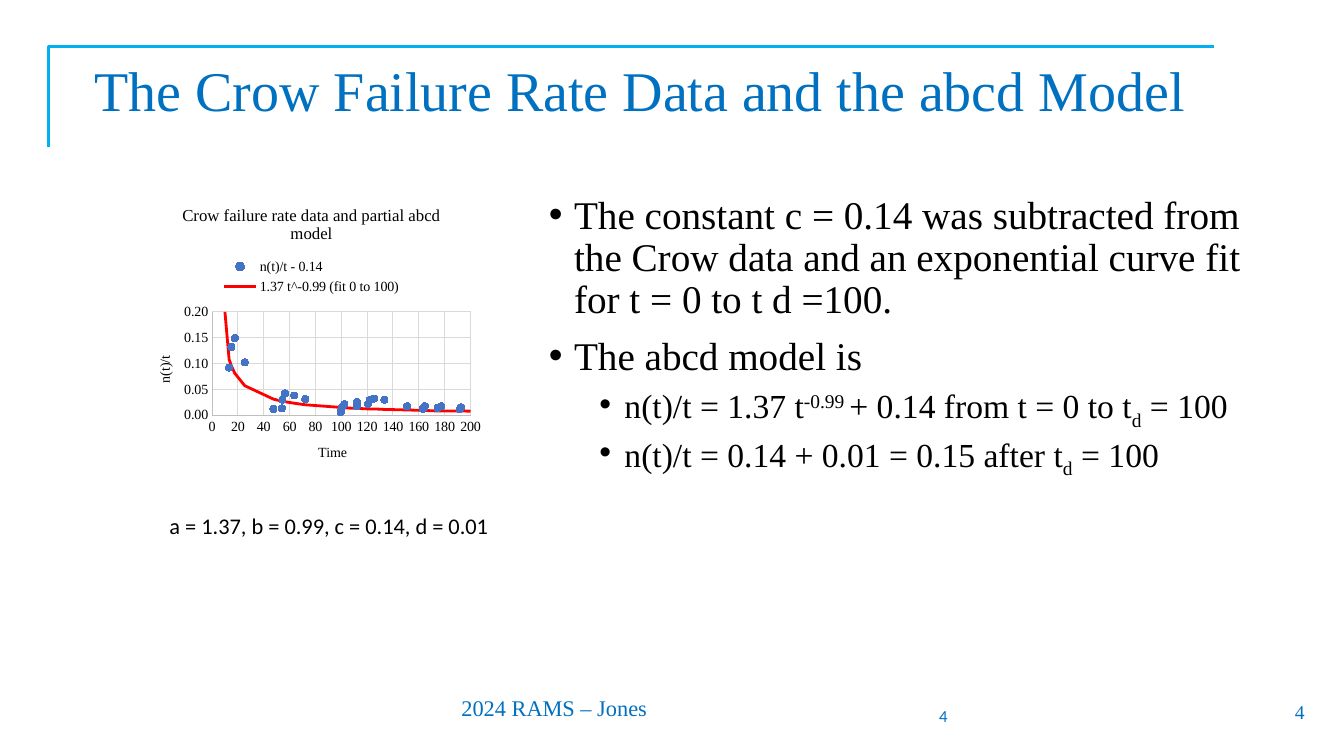
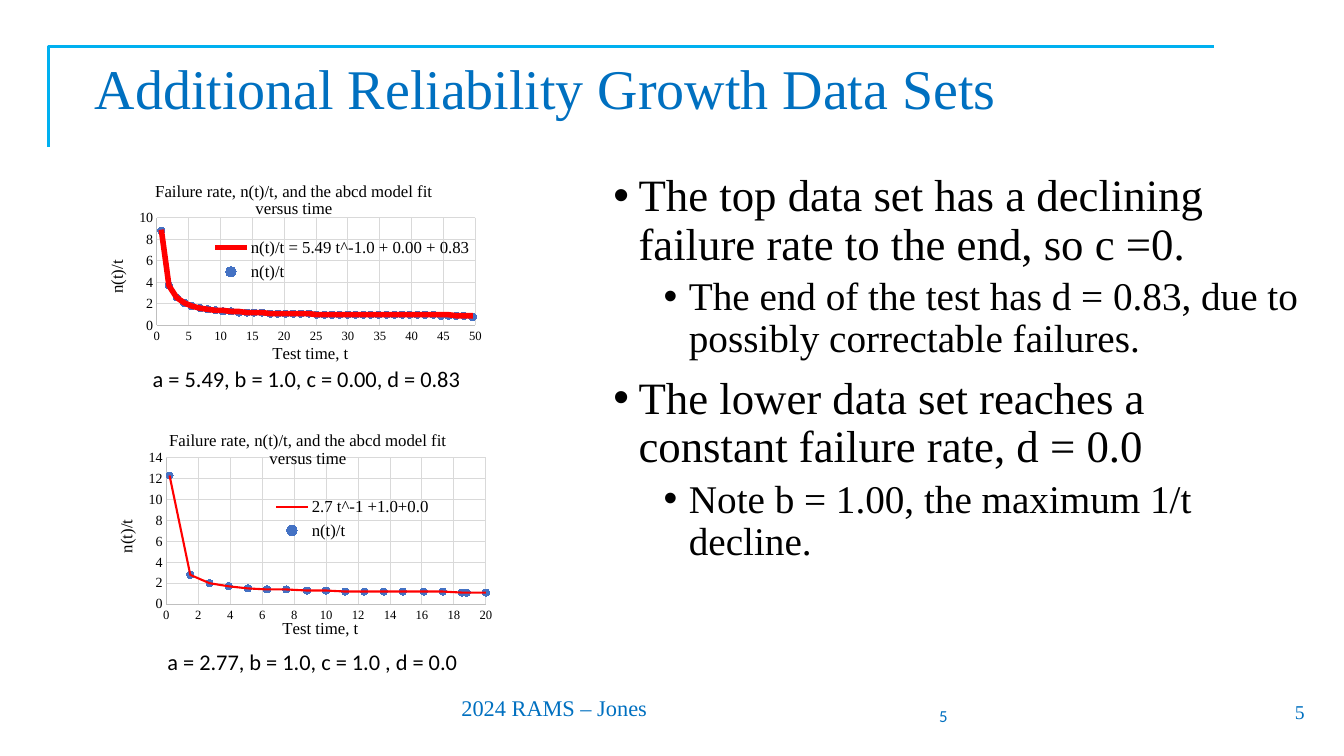
from lxml.etree import SubElement
from pptx import Presentation
from pptx.chart.data import XyChartData
from pptx.dml.color import RGBColor
from pptx.enum.chart import XL_CHART_TYPE, XL_LEGEND_POSITION, XL_MARKER_STYLE, XL_TICK_MARK
from pptx.enum.text import MSO_ANCHOR, MSO_AUTO_SIZE, PP_ALIGN
from pptx.oxml.ns import qn
from pptx.util import Pt

COLORS = {
    "title": "0070C0",
    "frame": "00B0F0",
    "text": "000000",
    "points": "4472C4",
    "fit": "FF0000",
    "axis": "BFBFBF",
    "grid": "D9D9D9",
}
SERIF = "Times New Roman"
SANS = "Calibri"
FIT_TITLE = "Failure rate, n(t)/t, and the abcd model fit versus time"

CROW_TIMES = [
    0.7, 3.7, 13.2, 15, 17.6, 25.3, 47.5, 54, 54.5, 56.4, 63.6, 72.2, 99.2, 99.6,
    100.3, 102.5, 112, 112.2, 120.9, 121.9, 125.5, 133.4, 151, 163, 164.7, 174.5,
    177.4, 191.6, 192.7, 213, 244.8, 249, 250.8, 260.1, 263.5, 273.1, 274.7, 282.8,
    285, 304, 315.4, 317.1, 320.6, 324.5, 324.9, 342, 350.2, 355.2, 364.6, 364.9,
    366.3, 373, 379.4, 389, 394.9, 395.2,
]
CROW_RATES = [
    1.294, 0.406, 0.092, 0.132, 0.149, 0.102, 0.012, 0.013, 0.03, 0.042, 0.038, 0.031,
    None, 0.006, 0.015, 0.021, 0.017, 0.025, 0.022, 0.029, 0.032, 0.03, 0.017, 0.012,
    0.017, 0.014, 0.017, 0.011, 0.015, 0.006, -0.008, -0.006, -0.003, -0.004, -0.002,
    -0.003, 0, -0.001, 0.002, -0.003, -0.005, -0.003, -0.001, 0.001, 0.004, 0, -0.001,
    0, -0.001, 0.002, 0.004, 0.004, 0.005, 0.004, 0.004, 0.007,
]
CROW_FIT = [
    1.945, 0.377, 0.108, 0.095, 0.081, 0.057, 0.031, 0.027, 0.027, 0.026, 0.023, 0.02,
    0.015, 0.015, 0.015, 0.014, 0.013, 0.013, 0.012, 0.012, 0.012, 0.011, 0.01, 0.009,
    0.009, 0.008, 0.008, 0.008, 0.008, 0.007,
] + [0.006] * 5 + [0.005] * 10 + [0.004] * 11

TOP_TIMES = [round(0.67 + 1.22 * i, 1) for i in range(41)] + [49.6]
TOP_START = [3.7, 2.6, 2.1, 1.8, 1.6, 1.5, 1.4]
TOP_FIT = [8.9] + TOP_START + [1.4] + [1.3] * 2 + [1.2] * 3 + [1.1] * 6 + [1] * 18 + [0.9] * 4
TOP_RATES = ([8.8] + TOP_START + [1.3] * 2 + [1.2] * 4 + [1.1] * 6 + [1] * 16
             + [0.9] * 4 + [0.8] * 2)

LOWER_TIMES = [0.2, 1.5, 2.7, 3.9, 5.1, 6.3, 7.5, 8.8, 10, 11.2, 12.4, 13.6, 14.8,
               16.1, 17.3, 18.5, 18.8, 20]
LOWER_RATES = [12.3, 2.8, 2, 1.7, 1.5, 1.4, 1.4, 1.3, 1.3] + [1.2] * 6 + [1.1] * 3


def rgb(name):
    return RGBColor.from_string(COLORS[name])


def style_font(font, size, color="text", name=SERIF):
    font.size, font.name, font.bold = Pt(size), name, False
    font.color.rgb = rgb(color)


def add_run(p, text, size, color="text", name=SERIF, baseline=0):
    r = p.add_run()
    r.text = text
    style_font(r.font, size, color, name)
    if baseline:
        r._r.get_or_add_rPr().set("baseline", str(baseline * 1000))


def add_label(s, box, text, size, color="text", name=SERIF, align=PP_ALIGN.LEFT,
              anchor=MSO_ANCHOR.TOP, wrap=True):
    tf = s.shapes.add_textbox(*map(Pt, box)).text_frame
    tf.word_wrap, tf.vertical_anchor = wrap, anchor
    p = tf.paragraphs[0]
    p.alignment = align
    add_run(p, text, size, color, name)


def add_frame(s):
    builder = s.shapes.build_freeform(Pt(34.5), Pt(105))
    builder.add_line_segments([(Pt(34.5), Pt(33)), (Pt(867), Pt(33))], close=False)
    sp = builder.convert_to_shape()
    sp.shadow.inherit = False
    sp.fill.background()
    sp.line.color.rgb = rgb("frame")
    sp.line.width = Pt(2)


def add_slide(prs, title, number, top, height):
    s = prs.slides.add_slide(prs.slide_layouts[5])
    add_frame(s)
    sp = s.shapes.title
    sp.left, sp.top, sp.width, sp.height = map(Pt, (60.5, top, 839.5, height))
    tf = sp.text_frame
    tf.word_wrap, tf.auto_size = True, MSO_AUTO_SIZE.NONE
    tf.vertical_anchor = MSO_ANCHOR.MIDDLE
    p = tf.paragraphs[0]
    p.alignment, p.line_spacing = PP_ALIGN.LEFT, 0.9
    add_run(p, title, 40, "title")
    add_label(s, (322.5, 492, 153, 27), "2024 RAMS – Jones", 16, "title", wrap=False)
    add_label(s, (723, 494, 216, 29), str(number), 14, "title",
              align=PP_ALIGN.RIGHT, anchor=MSO_ANCHOR.MIDDLE)
    add_label(s, (594, 486, 90, 36), str(number), 12, "title", SANS,
              PP_ALIGN.RIGHT, MSO_ANCHOR.BOTTOM)
    return s


def add_bullets(s, box, sizes, items):
    tf = s.shapes.add_textbox(*map(Pt, box)).text_frame
    tf.word_wrap = True
    for i, (level, runs) in enumerate(items):
        p = tf.add_paragraph() if i else tf.paragraphs[0]
        p.level = level
        pPr = p._p.get_or_add_pPr()
        pPr.set("marL", str(Pt(18 + 36 * level)))
        pPr.set("indent", str(-Pt(18)))
        SubElement(pPr, qn("a:buFont")).set("typeface", "Arial")
        SubElement(pPr, qn("a:buChar")).set("char", "•")
        p.line_spacing = 0.9
        p.space_before = Pt((10, 5)[level] if i else 0)
        for text, baseline in runs:
            add_run(p, text, sizes[level], baseline=baseline)


def set_layout(parent, index, box, inner=False):
    for old in parent.findall(qn("c:layout")):
        parent.remove(old)
    layout = SubElement(parent, qn("c:layout"))
    parent.insert(index, layout)
    manual = SubElement(layout, qn("c:manualLayout"))
    settings = [("layoutTarget", "inner")] if inner else []
    settings += [("xMode", "edge"), ("yMode", "edge"), *zip("xywh", box)]
    for tag, value in settings:
        SubElement(manual, qn("c:" + tag)).set("val", str(value))


def set_title(owner, text, size):
    owner.has_title = True
    title = owner.chart_title if hasattr(owner, "chart_title") else owner.axis_title
    add_run(title.text_frame.paragraphs[0], text, size)


def style_axis(axis, title, title_size, label_size, top, unit, number_format):
    set_title(axis, title, title_size)
    axis.minimum_scale, axis.maximum_scale, axis.major_unit = 0, top, unit
    axis.major_tick_mark = axis.minor_tick_mark = XL_TICK_MARK.NONE
    axis.has_major_gridlines = True
    for line, color in ((axis.format.line, "axis"), (axis.major_gridlines.format.line, "grid")):
        line.color.rgb = rgb(color)
        line.width = Pt(0.75)
    labels = axis.tick_labels
    labels.number_format, labels.number_format_is_linked = number_format, False
    style_font(labels.font, label_size)


def blank_missing(chart, series):
    for ser, (_, values, _) in zip(chart.element.iter(qn("c:ser")), series):
        for pt in list(ser.find(qn("c:yVal")).iter(qn("c:pt"))):
            if values[int(pt.get("idx"))] is None:
                pt.getparent().remove(pt)


def add_scatter(s, box, title, times, series, x_axis, y_axis, legend_size,
                plot_box=None, legend_box=None):
    data = XyChartData()
    for name, values, _ in series:
        points = data.add_series(name)
        for x, y in zip(times, values):
            points.add_data_point(x, y or 0)
    chart = s.shapes.add_chart(XL_CHART_TYPE.XY_SCATTER, *map(Pt, box), data).chart
    blank_missing(chart, series)
    style_font(chart.font, 10, name=SANS)
    set_title(chart, title, 12)
    style_axis(chart.category_axis, *x_axis)
    style_axis(chart.value_axis, *y_axis)
    chart.has_legend = True
    legend = chart.legend
    legend.position = XL_LEGEND_POSITION.RIGHT if legend_box else XL_LEGEND_POSITION.TOP
    legend.include_in_layout = False
    style_font(legend.font, legend_size)
    plot = chart.plots[0]
    plot.vary_by_categories = False
    for ser, (_, _, width) in zip(plot.series, series):
        if width:
            ser.marker.style = XL_MARKER_STYLE.NONE
            ser.format.line.color.rgb = rgb("fit")
            ser.format.line.width = Pt(width)
        else:
            ser.format.line.fill.background()
            ser.marker.style, ser.marker.size = XL_MARKER_STYLE.CIRCLE, 5
            ser.marker.format.fill.solid()
            ser.marker.format.fill.fore_color.rgb = rgb("points")
            ser.marker.format.line.color.rgb = rgb("points")
    if plot_box:
        set_layout(chart.element.find(".//" + qn("c:plotArea")), 0, plot_box, inner=True)
    if legend_box:
        set_layout(chart.element.find(".//" + qn("c:legend")), 1, legend_box)


def add_crow_slide(prs):
    s = add_slide(prs, "The Crow Failure Rate Data and the abcd Model", 4, 35, 63)
    add_bullets(s, (385, 136, 520, 311), (28, 24), [
        (0, [("The constant c = 0.14 was subtracted from the Crow data and an "
              "exponential curve fit for t = 0 to t d =100.", 0)]),
        (0, [("The abcd model is", 0)]),
        (1, [("n(t)/t = 1.37 t", 0), ("-0.99 ", 30), ("+ 0.14 from t = 0 to t", 0),
             ("d", -25), (" = 100", 0)]),
        (1, [("n(t)/t = 0.14 + 0.01 = 0.15 after t", 0), ("d", -25), (" = 100", 0)]),
    ])
    add_scatter(s, (96.5, 136, 252, 208), "Crow failure rate data and partial abcd model",
                CROW_TIMES,
                [("n(t)/t - 0.14", CROW_RATES, 0),
                 ("1.37 t^-0.99 (fit 0 to 100)", CROW_FIT, 2)],
                ("Time", 10, 10, 200, 20, "General"),
                ("n(t)/t", 10, 10, 0.2, 0.05, "0.00"), 10)
    add_label(s, (114, 362, 252, 27), "a = 1.37, b = 0.99, c = 0.14, d = 0.01", 16, name=SANS)


def add_data_sets_slide(prs):
    s = add_slide(prs, "Additional Reliability Growth Data Sets", 5, 31, 68)
    add_bullets(s, (431, 120, 505, 382), (32, 28), [
        (0, [("The top data set has a declining failure rate to the end, so c =0.", 0)]),
        (1, [("The end of the test has d = 0.83, due to possibly correctable failures.", 0)]),
        (0, [("The lower data set reaches a constant failure rate, d = 0.0", 0)]),
        (1, [("Note b = 1.00, the maximum 1/t decline.", 0)]),
    ])
    add_scatter(s, (66, 120, 288, 142.5), FIT_TITLE, TOP_TIMES,
                [("n(t)/t = 5.49 t^-1.0 + 0.00 + 0.83", TOP_FIT, 4), ("n(t)/t", TOP_RATES, 0)],
                ("Test time, t", 12, 9, 50, 5, "0"), ("n(t)/t", 12, 10, 10, 2, "0"), 12,
                (0.16, 0.25, 0.79, 0.54), (0.29, 0.32, 0.66, 0.28))
    add_scatter(s, (75.5, 298, 289, 161), FIT_TITLE, LOWER_TIMES,
                [("2.7 t^-1 +1.0+0.0", LOWER_RATES, 1.5), ("n(t)/t", LOWER_RATES, 0)],
                ("Test time, t", 12, 9, 20, 2, "0"), ("n(t)/t", 12, 10, 14, 2, "0"), 12,
                (0.15, 0.18, 0.79, 0.65), (0.41, 0.33, 0.4, 0.24))
    add_label(s, (102, 257, 252, 27), "a = 5.49, b = 1.0, c = 0.00, d = 0.83", 16, name=SANS)
    add_label(s, (112.5, 459.5, 252, 27), "a = 2.77, b = 1.0, c = 1.0 , d = 0.0", 16, name=SANS)


def main():
    prs = Presentation()
    prs.slide_width, prs.slide_height = Pt(960), Pt(540)
    add_crow_slide(prs)
    add_data_sets_slide(prs)
    prs.save("out.pptx")


if __name__ == "__main__":
    main()
